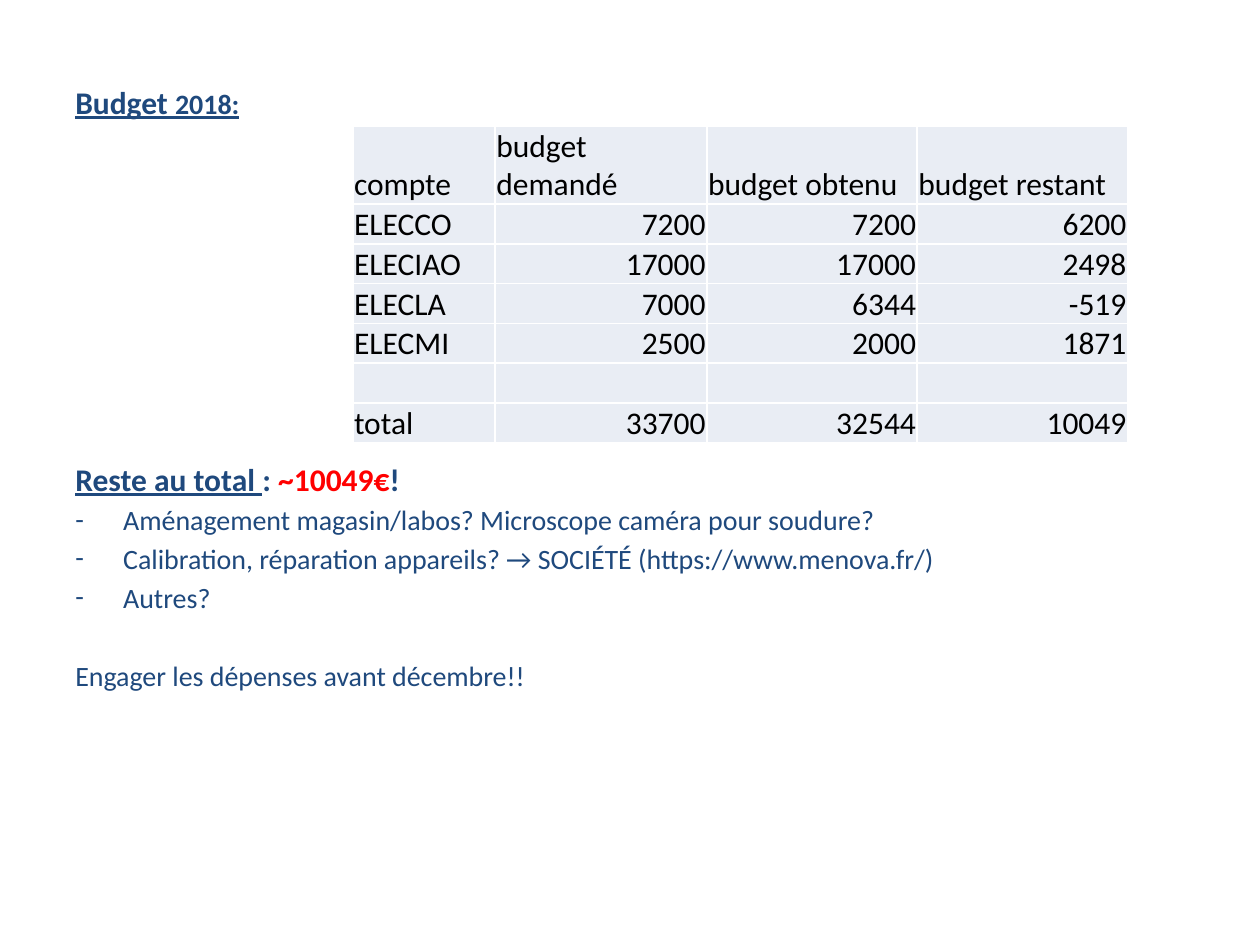
from lxml.etree import SubElement
from pptx import Presentation
from pptx.dml.color import RGBColor
from pptx.enum.text import MSO_ANCHOR, PP_ALIGN
from pptx.oxml.ns import qn
from pptx.util import Inches, Pt

NAVY, RED, BLACK, WHITE, PALE = "1F497D", "FF0000", "000000", "FFFFFF", "E9EDF4"


def color(value):
    return RGBColor.from_string(value)


def add_run(paragraph, text, size, fill=NAVY, bold=False, underline=False):
    run = paragraph.add_run()
    run.text = text
    run.font.name = "Calibri"
    run.font.size = Pt(size)
    run.font.bold = bold
    run.font.underline = underline
    run.font.color.rgb = color(fill)


presentation = Presentation()
presentation.slide_width = Inches(10)
presentation.slide_height = Inches(7.5)
slide = presentation.slides.add_slide(presentation.slide_layouts[6])

# Heading
heading = slide.shapes.add_textbox(Inches(0.5), Inches(0.61), Inches(9), Inches(0.4))
heading.text_frame.word_wrap = True
paragraph = heading.text_frame.paragraphs[0]
add_run(paragraph, "Budget ", 18, bold=True, underline=True)
add_run(paragraph, "2018:", 16, bold=True, underline=True)

# Remaining budget and spending ideas
remainder = slide.shapes.add_textbox(Inches(0.5), Inches(3.6), Inches(9), Inches(2.1))
frame = remainder.text_frame
frame.word_wrap = True
paragraph = frame.paragraphs[0]
add_run(paragraph, "Reste au total ", 18, bold=True, underline=True)
add_run(paragraph, ": ", 18, bold=True)
add_run(paragraph, "~10049€", 18, RED, bold=True)
add_run(paragraph, "!", 18, bold=True)

ideas = [
    "Aménagement magasin/labos? Microscope caméra pour soudure?",
    "Calibration, réparation appareils? → SOCIÉTÉ (https://www.menova.fr/)",
    "Autres?",
]
for idea in ideas:
    paragraph = frame.add_paragraph()
    paragraph.space_before = Pt(3)
    properties = paragraph._p.get_or_add_pPr()
    properties.set("marL", str(Inches(0.38)))
    properties.set("indent", str(Inches(-0.38)))
    SubElement(properties, qn("a:buFont"), typeface="Calibri")
    SubElement(properties, qn("a:buChar"), char="-")
    add_run(paragraph, idea, 16)

paragraph = frame.add_paragraph()
paragraph.space_before = Pt(25.6)
add_run(paragraph, "Engager les dépenses avant décembre!!", 16)

# Budget table
budget = [
    ["compte", "budget demandé", "budget obtenu", "budget restant"],
    ["ELECCO", "7200", "7200", "6200"],
    ["ELECIAO", "17000", "17000", "2498"],
    ["ELECLA", "7000", "6344", "-519"],
    ["ELECMI", "2500", "2000", "1871"],
    ["", "", "", ""],
    ["total", "33700", "32544", "10049"],
]
column_widths = [1.13, 1.68, 1.67, 1.67]
row_heights = [0.62] + [0.316] * 6
table = slide.shapes.add_table(
    len(budget), len(column_widths), Inches(2.8), Inches(1),
    Inches(sum(column_widths)), Inches(sum(row_heights)),
).table
table.first_row = False
table.horz_banding = False
for column, width in zip(table.columns, column_widths):
    column.width = Inches(width)

for row_index, (values, height) in enumerate(zip(budget, row_heights)):
    table.rows[row_index].height = Inches(height)
    for column_index, value in enumerate(values):
        cell = table.cell(row_index, column_index)
        cell.margin_left = cell.margin_right = cell.margin_top = Inches(0.01)
        cell.margin_bottom = 0
        cell.vertical_anchor = MSO_ANCHOR.BOTTOM
        for side in ("lnL", "lnR", "lnT", "lnB"):
            border = SubElement(cell._tc.get_or_add_tcPr(), qn(f"a:{side}"), w=str(Pt(1)))
            border_fill = SubElement(border, qn("a:solidFill"))
            SubElement(border_fill, qn("a:srgbClr"), val=WHITE)
        cell.fill.solid()
        cell.fill.fore_color.rgb = color(PALE)
        paragraph = cell.text_frame.paragraphs[0]
        if row_index > 0 and column_index > 0:
            paragraph.alignment = PP_ALIGN.RIGHT
        if value:
            add_run(paragraph, value, 18, BLACK)

presentation.save("out.pptx")
